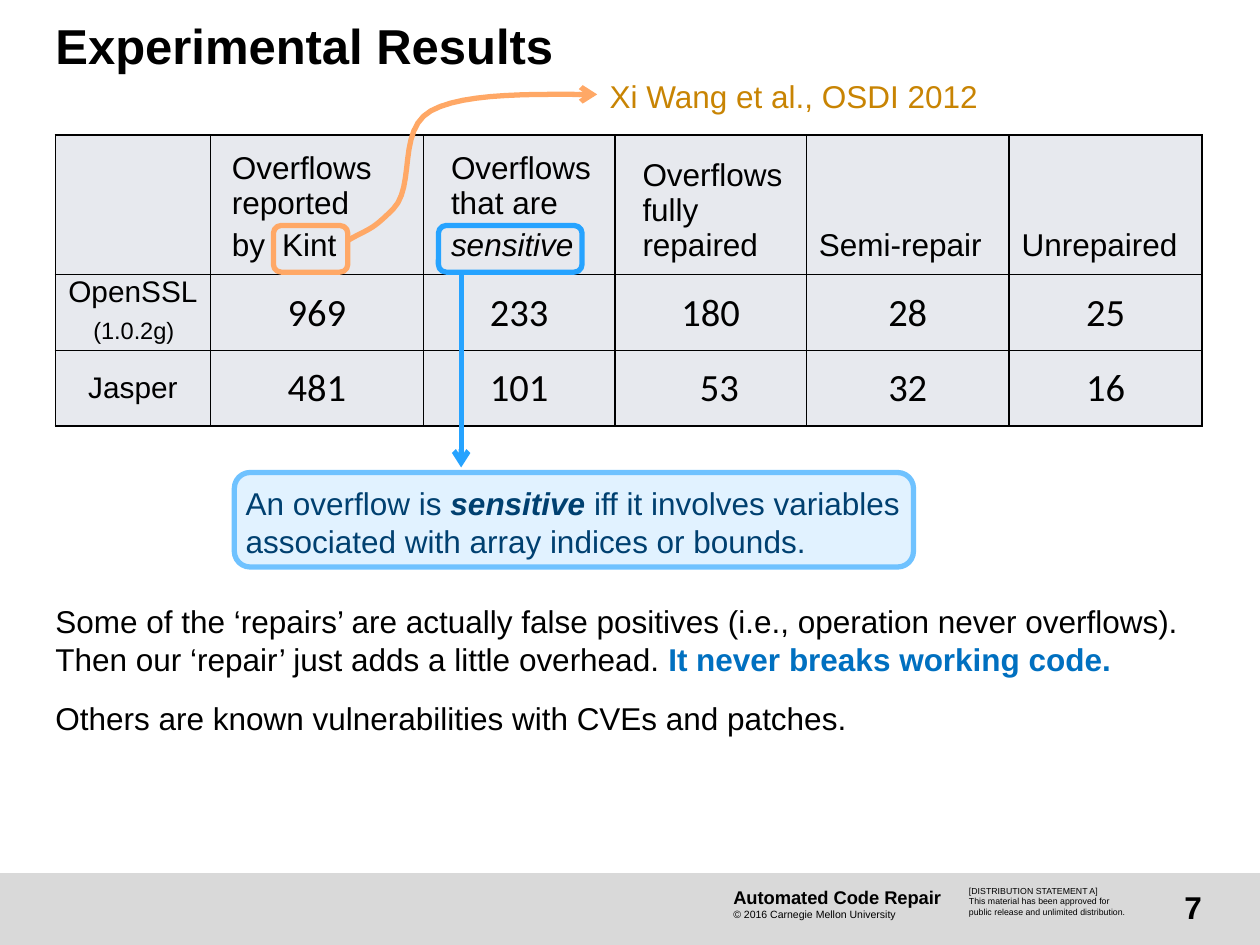
from lxml import etree
from pptx import Presentation
from pptx.dml.color import RGBColor
from pptx.enum.shapes import MSO_CONNECTOR, MSO_SHAPE
from pptx.enum.text import MSO_ANCHOR, PP_ALIGN
from pptx.oxml.ns import qn
from pptx.util import Inches, Pt

LEFT, CENTER, RIGHT = PP_ALIGN.LEFT, PP_ALIGN.CENTER, PP_ALIGN.RIGHT
TOP, MIDDLE, BOTTOM = MSO_ANCHOR.TOP, MSO_ANCHOR.MIDDLE, MSO_ANCHOR.BOTTOM

COLORS = {
    "black": "000000", "footer": "D9D9D9", "cell": "E7E9EE",
    "orange": "FFA866", "gold": "C88403", "blue": "26A3FF",
    "callout_fill": "E1F2FF", "callout_line": "6FC2FF",
    "callout_text": "004070", "emphasis": "0070C0",
}
COLUMNS = [1.23, 1.69, 1.52, 1.52, 1.61, 1.53]
ROWS = [1.11, 0.6, 0.6]
HEADER_INSETS = [0.17, 0.22, 0.22, 0.1, 0.1]
HEADERS = [
    ["Overflows reported", "by\tKint"],
    ["Overflows that are", "sensitive"],
    ["Overflows fully repaired"],
    ["Semi-repair"],
    ["Unrepaired"],
]
RESULTS = [
    ("OpenSSL", ["969", "233", "180", "28", "25"]),
    ("Jasper", ["481", "101", "53", "32", "16"]),
]


def rgb(name):
    return RGBColor.from_string(COLORS[name])


def style(paragraph, size, color="black", name="Arial", bold=False, align=LEFT):
    font = paragraph.font
    font.name, font.size, font.bold = name, Pt(size), bold
    font.color.rgb = rgb(color)
    paragraph.alignment = align


def add_text(slide, box, text, size, inset=0, wrap=True, anchor=TOP, **look):
    """Add a text box and return its text frame and first paragraph."""
    frame = slide.shapes.add_textbox(*map(Inches, box)).text_frame
    frame.word_wrap = wrap
    frame.vertical_anchor = anchor
    frame.margin_left = frame.margin_right = Inches(inset)
    frame.margin_top = frame.margin_bottom = Inches(inset / 2)
    paragraph = frame.paragraphs[0]
    paragraph.add_run().text = text
    style(paragraph, size, **look)
    return frame, paragraph


def add_box(slide, box, kind, fill=None, line=None):
    shape = slide.shapes.add_shape(kind, *map(Inches, box))
    shape.shadow.inherit = False
    if fill:
        shape.fill.solid()
        shape.fill.fore_color.rgb = rgb(fill)
    else:
        shape.fill.background()
    if line:
        shape.line.color.rgb = rgb(line)
        shape.line.width = Pt(3)
    else:
        shape.line.fill.background()
    return shape


def style_arrow(shape, color, end):
    shape.line.color.rgb = rgb(color)
    shape.line.width = Pt(3)
    etree.SubElement(shape.line._get_or_add_ln(), qn(f"a:{end}"), type="arrow")


def fill_cell(cell, anchor, left, top, bottom):
    """Set the insets, borders and fill of a table cell."""
    cell.vertical_anchor = anchor
    cell.margin_left, cell.margin_right = Inches(left), Inches(0.1)
    cell.margin_top, cell.margin_bottom = Inches(top), Inches(bottom)
    properties = cell._tc.get_or_add_tcPr()
    for side in ("lnL", "lnR", "lnT", "lnB"):
        border = etree.SubElement(properties, qn(f"a:{side}"), w=str(Pt(1)))
        solid = etree.SubElement(border, qn("a:solidFill"))
        etree.SubElement(solid, qn("a:srgbClr"), val=COLORS["black"])
    cell.fill.solid()
    cell.fill.fore_color.rgb = rgb("cell")


def add_tab(paragraph, position):
    tabs = etree.SubElement(paragraph._p.get_or_add_pPr(), qn("a:tabLst"))
    etree.SubElement(tabs, qn("a:tab"), pos=str(Inches(position)), algn="l")


def add_results_table(slide, left, top):
    box = (left, top, sum(COLUMNS), sum(ROWS))
    table = slide.shapes.add_table(len(ROWS), len(COLUMNS), *map(Inches, box)).table
    for column, width in zip(table.columns, COLUMNS):
        column.width = Inches(width)
    for row, height in zip(table.rows, ROWS):
        row.height = Inches(height)

    # Header row
    fill_cell(table.cell(0, 0), BOTTOM, 0.1, 0.05, 0.09)
    for index, (lines, inset) in enumerate(zip(HEADERS, HEADER_INSETS), 1):
        cell = table.cell(0, index)
        fill_cell(cell, BOTTOM, inset, 0.05, 0.09)
        cell.text = "\n".join(lines)
        for number, paragraph in enumerate(cell.text_frame.paragraphs):
            if "\t" in lines[number]:
                add_tab(paragraph, 0.4)
            style(paragraph, 18)
            if number:
                paragraph.space_before = Pt(4)
            paragraph.font.italic = lines[number] == "sensitive"

    # Result rows
    for row, (project, counts) in enumerate(RESULTS, 1):
        cell = table.cell(row, 0)
        if project == "OpenSSL":  # leaves room for the version below
            fill_cell(cell, TOP, 0.1, 0.01, 0)
        else:
            fill_cell(cell, MIDDLE, 0.1, 0.11, 0.11)
        cell.text = project
        style(cell.text_frame.paragraphs[0], 17, align=CENTER)
        for column, count in enumerate(counts, 1):
            cell = table.cell(row, column)
            fill_cell(cell, BOTTOM, 0.24 if count == "53" else 0.1, 0.11, 0.11)
            cell.text = count
            style(cell.text_frame.paragraphs[0], 22, name="Calibri", align=CENTER)

    add_text(slide, (left + 0.3, top + 1.44, 0.65, 0.23), "(1.0.2g)", 13.5, wrap=False)


def bezier_points(start, first, second, end, steps=12):
    for step in range(1, steps + 1):
        t = step / steps
        weights = ((1 - t) ** 3, 3 * t * (1 - t) ** 2, 3 * t * t * (1 - t), t ** 3)
        yield tuple(
            Inches(sum(weight * value for weight, value in zip(weights, axis)))
            for axis in zip(start, first, second, end)
        )


def add_citation(slide):
    """Mark Kint and lead a curved arrow to its paper."""
    add_text(slide, (4.74, 0.56, 3.15, 0.4), "Xi Wang et al., OSDI 2012", 18,
             inset=0.1, wrap=False, color="gold")
    add_box(slide, (2.17, 1.79, 0.59, 0.37), MSO_SHAPE.ROUNDED_RECTANGLE, line="orange")
    knots = [(4.74, 0.75), (4.28, 0.75), (3.69, 0.73), (3.42, 0.88), (3.15, 1.03),
             (3.3, 1.48), (3.12, 1.66), (2.94, 1.84), (2.93, 1.81), (2.76, 1.91)]
    builder = slide.shapes.build_freeform(*map(Inches, knots[0]))
    for index in range(0, len(knots) - 1, 3):
        builder.add_line_segments(bezier_points(*knots[index:index + 4]), close=False)
    curve = builder.convert_to_shape()
    curve.shadow.inherit = False
    curve.fill.background()
    style_arrow(curve, "orange", "headEnd")


def add_definition(slide, left, top, width, height):
    """Explain the word sensitive in a callout."""
    add_box(slide, (left, top, width, height), MSO_SHAPE.ROUNDED_RECTANGLE,
            "callout_fill", "callout_line")
    _, paragraph = add_text(slide, (left + 0.09, top + 0.09, 5.7, 0.77),
                            "An overflow is ", 18, color="callout_text")
    term = paragraph.add_run()
    term.text = "sensitive"
    term.font.bold = term.font.italic = True
    paragraph.add_run().text = (
        " iff it involves variables associated with array indices or bounds.")
    add_box(slide, (3.48, 1.79, 1.14, 0.37), MSO_SHAPE.ROUNDED_RECTANGLE, line="blue")
    ends = map(Inches, (3.66, 2.15, 3.66, top - 0.04))
    arrow = slide.shapes.add_connector(MSO_CONNECTOR.STRAIGHT, *ends)
    style_arrow(arrow, "blue", "tailEnd")
    etree.SubElement(arrow._element.spPr, qn("a:effectLst"))


def add_remarks(slide, box):
    frame, paragraph = add_text(
        slide, box,
        "Some of the ‘repairs’ are actually false positives (i.e., operation never "
        "overflows). Then our ‘repair’ just adds a little overhead. ", 18)
    promise = paragraph.add_run()
    promise.text = "It never breaks working code."
    promise.font.bold = True
    promise.font.color.rgb = rgb("emphasis")
    others = frame.add_paragraph()
    others.text = "Others are known vulnerabilities with CVEs and patches."
    style(others, 18)
    others.space_before = Pt(12)


def add_footer(slide, top, height):
    add_box(slide, (0, top, 10, height), MSO_SHAPE.RECTANGLE, "footer")
    add_text(slide, (8.98, top + 0.07, 0.56, 0.4), "7", 18, anchor=MIDDLE,
             bold=True, align=RIGHT)
    frame, _ = add_text(slide, (5.82, top + 0.1, 2.01, 0.28),
                        "Automated Code Repair", 10.5, bold=True)
    owner = frame.add_paragraph()
    owner.text = "© 2016 Carnegie Mellon University"
    style(owner, 6)
    _, statement = add_text(slide, (7.69, top + 0.1, 1.29, 0.38),
                            "[DISTRIBUTION STATEMENT A]", 5)
    statement.add_line_break()
    statement.add_run().text = (
        "This material has been approved for public release and unlimited distribution.")


def main():
    presentation = Presentation()
    presentation.slide_width, presentation.slide_height = Inches(10), Inches(7.5)
    slide = presentation.slides.add_slide(presentation.slide_layouts[6])
    add_footer(slide, 6.93, 0.57)
    _, title = add_text(slide, (0.44, 0.18, 8.31, 0.44), "Experimental Results", 28, bold=True)
    title.line_spacing = 0.9
    add_results_table(slide, 0.44, 1.07)
    add_citation(slide)
    add_definition(slide, 1.86, 3.75, 5.39, 0.75)
    add_remarks(slide, (0.44, 4.78, 9.12, 1.91))
    presentation.save("out.pptx")


if __name__ == "__main__":
    main()
